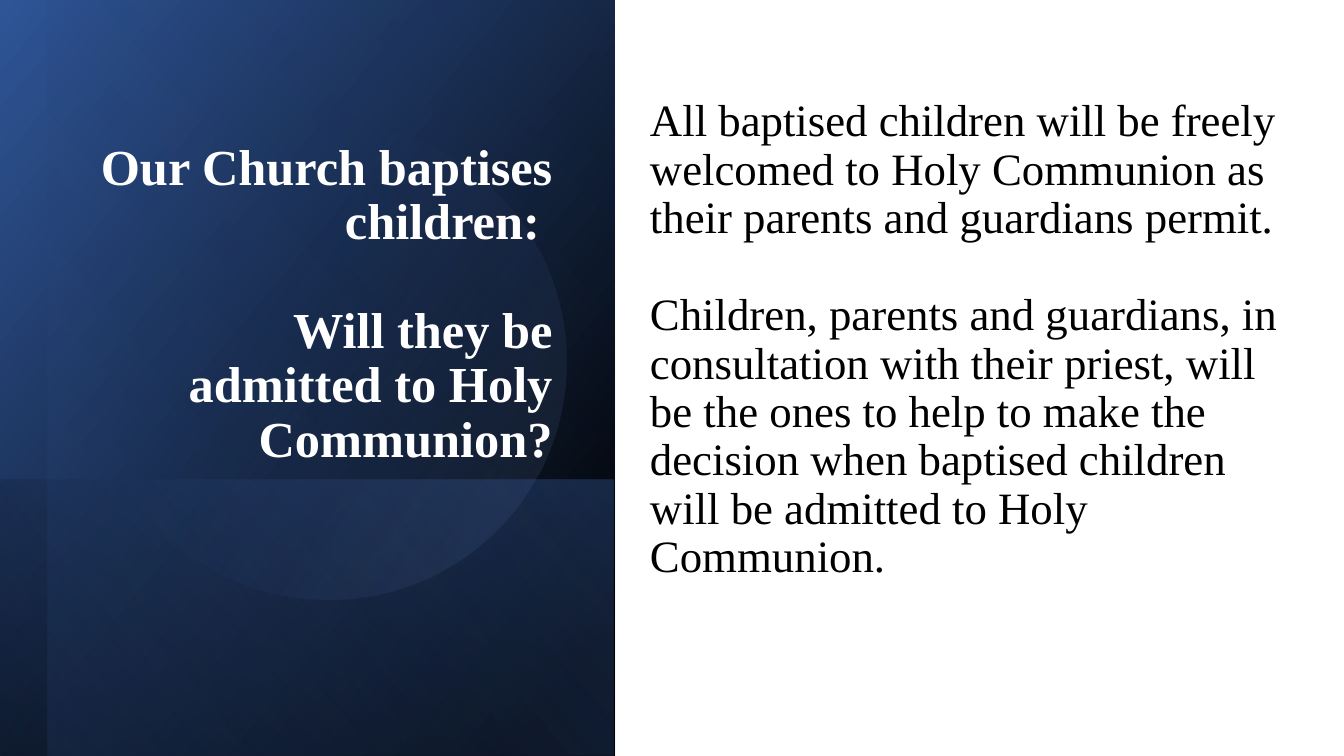
import lxml.etree
import pptx
import pptx.dml.color
import pptx.enum.shapes
import pptx.enum.text
import pptx.oxml.ns
import pptx.util

Pt = pptx.util.Pt
SHAPE = pptx.enum.shapes.MSO_SHAPE
ALIGN = pptx.enum.text.PP_ALIGN
ANCHOR = pptx.enum.text.MSO_ANCHOR
qn = pptx.oxml.ns.qn

COLORS = {"black": "000000", "white": "FFFFFF", "navy": "2F5597",
          "blue": "4472C4", "pale": "8FAADC"}


class Deck:
    font = "Times New Roman"
    line_spacing = 0.9

    def __init__(self, width, height):
        self.prs = pptx.Presentation()
        self.prs.slide_width, self.prs.slide_height = Pt(width), Pt(height)
        self.slide = self.prs.slides.add_slide(self.prs.slide_layouts[6])

    def color(self, name):
        return pptx.dml.color.RGBColor.from_string(COLORS[name])

    def glow(self, kind, box, stops, angle, rotation=90, flip=True):
        """Gradient shape; box is the visible area after a quarter turn.

        Each stop is (position %, color, opacity %); angle is clockwise.
        """
        x, y, w, h = box
        s = self.slide.shapes.add_shape(
            kind, Pt(x + (w - h) / 2), Pt(y + (h - w) / 2), Pt(h), Pt(w))
        s.rotation = rotation
        s.shadow.inherit = False
        s.line.fill.background()
        s.fill.gradient()
        s.fill.gradient_angle = 360 - angle
        for stop, (position, name, _) in zip(s.fill.gradient_stops, stops):
            stop.position = position / 100
            stop.color.rgb = self.color(name)
        spPr = s._element.spPr
        if flip:
            spPr.find(qn("a:xfrm")).set("flipH", "1")
        for clr, (_, _, opacity) in zip(spPr.iter(qn("a:srgbClr")), stops):
            if opacity < 100:
                alpha = lxml.etree.SubElement(clr, qn("a:alpha"))
                alpha.set("val", str(opacity * 1000))

    def text(self, box, paragraphs, size, color, gap, anchor,
             align=ALIGN.LEFT, bold=False):
        tf = self.slide.shapes.add_textbox(*map(Pt, box)).text_frame
        tf.word_wrap = True
        tf.vertical_anchor = anchor
        for i, words in enumerate(paragraphs):
            p = tf.add_paragraph() if i else tf.paragraphs[0]
            formats = {"alignment": align, "line_spacing": self.line_spacing,
                       "space_before": Pt(gap if i else 0)}
            for key, value in formats.items():
                setattr(p, key, value)
            r = p.add_run()
            r.text = words
            for key, value in {"name": self.font, "size": Pt(size),
                               "bold": bold}.items():
                setattr(r.font, key, value)
            r.font.color.rgb = self.color(color)


def main():
    deck = Deck(960, 540)

    # Blue panel built from layered gradients
    deck.glow(SHAPE.RECTANGLE, (0, 0, 439.2, 540),
              [(8, "black", 100), (100, "navy", 100)], 50)
    deck.glow(SHAPE.RECTANGLE, (-0.7, 342.7, 439.2, 197.3),
              [(2, "blue", 29), (100, "black", 30)], 130)
    deck.glow(SHAPE.RECTANGLE, (34.2, 0, 405.4, 540),
              [(0, "black", 0), (99, "blue", 11)], 130)
    deck.glow(SHAPE.OVAL, (64.8, 88.6, 339.8, 339.8),
              [(39, "blue", 0), (100, "pale", 15)], 290,
              rotation=101.6, flip=False)

    # Question
    deck.text((64.8, 49, 337, 289),
              ["Our Church baptises children: ",
               "Will they be admitted to Holy Communion?"],
              36, "white", 38.9, ANCHOR.BOTTOM, ALIGN.RIGHT, bold=True)

    # Answer
    deck.text((457.2, 51.1, 468.7, 384),
              ["All baptised children will be freely welcomed to Holy "
               "Communion as their parents and guardians permit.",
               "Children, parents and guardians, in consultation with their "
               "priest, will be the ones to help to make the decision when "
               "baptised children will be admitted to Holy Communion."],
              32, "black", 34.6, ANCHOR.MIDDLE)

    deck.prs.save("out.pptx")


if __name__ == "__main__":
    main()
